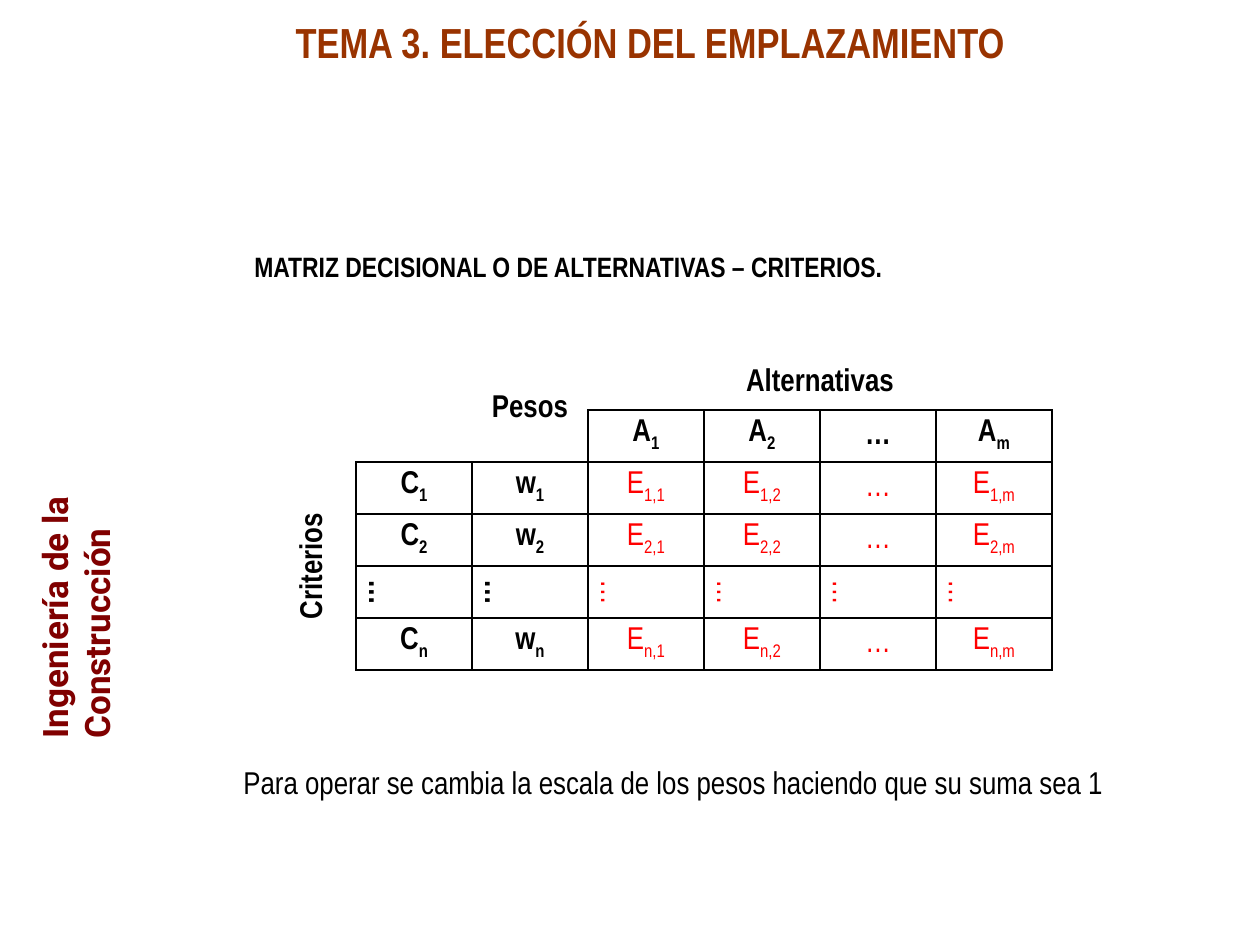
from lxml import etree
from pptx import Presentation
from pptx import util as u
from pptx.dml.color import RGBColor
from pptx.enum import text
from pptx.oxml.ns import qn

EMU_PER_PX = 914400 / 126
COLORS = {"black": "000000", "red": "FF0000", "maroon": "800000", "rust": "993300"}
NO_STYLE = "{2D5ABB26-0587-4C30-8999-92F81FD0307C}"
LEFT, CENTER, RIGHT = text.PP_ALIGN.LEFT, text.PP_ALIGN.CENTER, text.PP_ALIGN.RIGHT

COLUMNS = [63] + [116] * 6
ROWS = [53] + [52] * 5
SIDES = {"lnL": (0, -1), "lnR": (0, 1), "lnT": (-1, 0), "lnB": (1, 0)}


def px(length):
    return u.Emu(round(length * EMU_PER_PX))


def in_grid(row, column):
    """Tell whether a table position belongs to the ruled part."""
    first = 3 if row == 1 else 1
    return 1 <= row < len(ROWS) and first <= column < len(COLUMNS)


class SlideBuilder:
    def __init__(self, slide, font="Arial Narrow"):
        self.slide = slide
        self.font = font

    def add_span(self, para, words, size=18, color="black", bold=True,
                 font=None, subscript=False):
        span = para.add_run()
        span.text = words
        span.font.name = font or self.font
        span.font.size = u.Pt(size)
        span.font.bold = bold
        span.font.color.rgb = RGBColor.from_string(COLORS[color])
        if subscript:
            span.font._element.set("baseline", "-25000")

    def set_words(self, box, words, wrap, **style):
        frame = box.text_frame
        frame.word_wrap = wrap
        frame.auto_size = text.MSO_AUTO_SIZE.NONE
        frame.vertical_anchor = text.MSO_ANCHOR.TOP
        para = frame.paragraphs[0]
        para.alignment = LEFT
        self.add_span(para, words, **style)

    def title(self, words, left, top, width, height, **style):
        box = self.slide.shapes.title
        box.left, box.top, box.width, box.height = map(px, (left, top, width, height))
        self.set_words(box, words, False, **style)

    def label(self, words, left, top, width, height, wrap=False, rotation=0, **style):
        box = self.slide.shapes.add_textbox(*map(px, (left, top, width, height)))
        box.rotation = rotation
        self.set_words(box, words, wrap, **style)

    def table(self, left, top, columns, rows):
        frame = self.slide.shapes.add_table(
            len(rows), len(columns), px(left), px(top), px(sum(columns)), px(sum(rows)))
        table = frame.table
        table.first_row = table.horz_banding = False
        table._tbl.tblPr.find(qn("a:tableStyleId")).text = NO_STYLE
        for column, width in zip(table.columns, columns):
            column.width = px(width)
        for row, height in zip(table.rows, rows):
            row.height = px(height)
        for row in range(len(rows)):
            for column in range(len(columns)):
                cell = table.cell(row, column)
                self.rule(cell, row, column)
                cell.fill.background()
        return table

    def rule(self, cell, row, column):
        """Draw each side of the cell that touches the ruled part."""
        props = cell._tc.get_or_add_tcPr()
        for side, (down, across) in SIDES.items():
            if in_grid(row, column) or in_grid(row + down, column + across):
                line = etree.SubElement(props, qn("a:" + side), w=str(u.Pt(1)))
                fill = etree.SubElement(line, qn("a:solidFill"))
                etree.SubElement(fill, qn("a:srgbClr"), val=COLORS["black"])

    def fill_cell(self, cell, words, index="", vert=None, align=CENTER, **style):
        cell.vertical_anchor = text.MSO_ANCHOR.MIDDLE
        if vert:
            cell._tc.get_or_add_tcPr().set("vert", vert)
        para = cell.text_frame.paragraphs[0]
        para.alignment = align
        self.add_span(para, words, **style)
        if index:
            self.add_span(para, index, subscript=True, **style)


def add_decision_matrix(builder):
    table = builder.table(293, 357, COLUMNS, ROWS)
    for first, last, words, vert in (((0, 2), (1, 2), "Pesos", None),
                                     ((0, 3), (0, 6), "Alternativas", None),
                                     ((2, 0), (5, 0), "Criterios", "vert270")):
        table.cell(*first).merge(table.cell(*last))
        builder.fill_cell(table.cell(*first), words, vert=vert)

    alternatives = ["1", "2", "…", "m"]
    for column, name in enumerate(alternatives, 3):
        head = ("…",) if name == "…" else ("A", name)
        builder.fill_cell(table.cell(1, column), *head)

    for row, criterion in enumerate(["1", "2", "…", "n"], 2):
        for column, name in enumerate(["C", "w"] + alternatives, 1):
            cell = table.cell(row, column)
            is_value = column > 2
            style = {"color": "red" if is_value else "black", "bold": not is_value}
            if criterion == "…":
                builder.fill_cell(cell, "…", vert="vert", align=RIGHT, **style)
            elif name == "…":
                builder.fill_cell(cell, "…", **style)
            elif is_value:
                builder.fill_cell(cell, "E", f"{criterion},{name}", **style)
            else:
                builder.fill_cell(cell, name, criterion, **style)


def main():
    deck = Presentation()
    deck.slide_width, deck.slide_height = px(1260), px(945)
    builder = SlideBuilder(deck.slides.add_slide(deck.slide_layouts[5]))
    builder.title("TEMA 3. ELECCIÓN DEL EMPLAZAMIENTO", 283, 10, 742, 63,
                  size=24, color="rust")
    builder.label("Ingeniería de la Construcción", -169, 500, 447, 55, wrap=True,
                  rotation=270, size=20, color="maroon", font="Roboto")
    add_decision_matrix(builder)
    builder.label("MATRIZ DECISIONAL O DE ALTERNATIVAS – CRITERIOS.",
                  242, 243, 662, 47, size=16)
    builder.label("Para operar se cambia la escala de los pesos haciendo que su suma sea 1",
                  231, 757, 903, 50, wrap=True, bold=False)
    deck.save("out.pptx")


if __name__ == "__main__":
    main()
